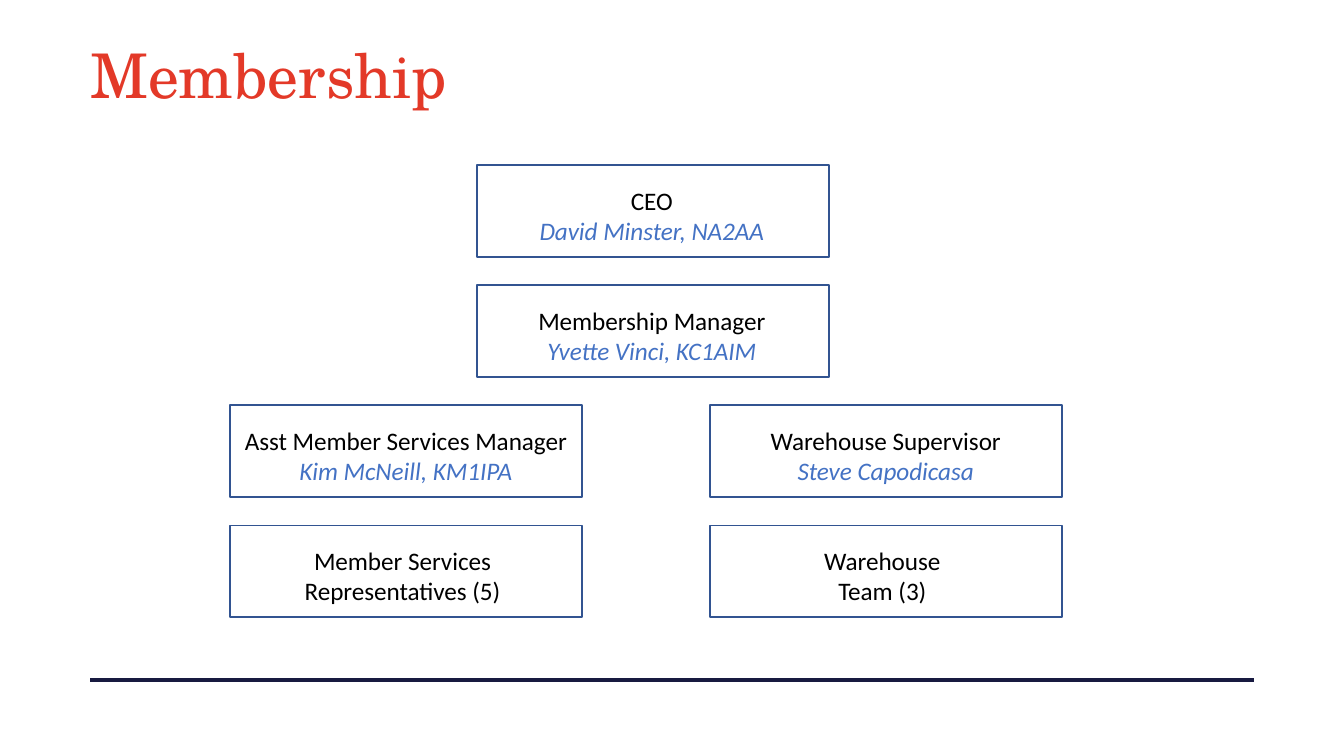
from dataclasses import dataclass

from lxml import etree
from pptx import Presentation
from pptx.dml.color import RGBColor
from pptx.enum.shapes import MSO_CONNECTOR, MSO_SHAPE
from pptx.enum.text import MSO_ANCHOR, MSO_AUTO_SIZE, PP_ALIGN
from pptx.oxml.ns import qn
from pptx.util import Inches, Pt

RECT = MSO_SHAPE.RECTANGLE
LINE = MSO_CONNECTOR.STRAIGHT
UPPER = MSO_ANCHOR.TOP
GROW = MSO_AUTO_SIZE.SHAPE_TO_FIT_TEXT
FIXED = MSO_AUTO_SIZE.NONE
LEFT, CENTER = PP_ALIGN.LEFT, PP_ALIGN.CENTER


@dataclass(frozen=True)
class Theme:
    """Colours, fonts and type sizes of the slide."""
    red: str = "E33928"
    navy: str = "181A40"
    edge: str = "325491"
    black: str = "000000"
    blue: str = "4472C4"
    head: str = "TeX Gyre Schola"
    body: str = "Calibri"
    big: float = 33
    small: float = 13.5


THEME = Theme()
WIDE, HIGH = 2.62, 0.68
TOP, LAST, ROWS = 1.23, 3.91, 4
STEP = (LAST - TOP) / (ROWS - 1)
MID, WEST, EAST = 3.55, 1.71, 5.28
FULL, TRIM, SLIM = (0, WIDE), (0.17, 2.26), (0.38, 1.81)

CARDS = [
    (MID, 0, TRIM, "CEO", "David Minster, NA2AA", True),
    (MID, 1, TRIM, "Membership Manager", "Yvette Vinci, KC1AIM", True),
    (WEST, 2, FULL, "Asst Member Services Manager", "Kim McNeill, KM1IPA", True),
    (WEST, 3, SLIM, "Member Services", "Representatives (5)", False),
    (EAST, 2, FULL, "Warehouse Supervisor", "Steve Capodicasa", True),
    (EAST, 3, SLIM, "Warehouse", "Team (3)", False),
]


def style(item, **values):
    """Set each named value on an item."""
    for name, value in values.items():
        setattr(item, name, value)


def write(para, text, color, align=CENTER, **font):
    """Fill a paragraph with one styled run."""
    run = para.add_run()
    run.text = text
    para.alignment = align
    style(run.font, **font)
    run.font.color.rgb = RGBColor.from_string(color)


def stroke(shape, color, width):
    """Give a shape or connector a solid line."""
    shape.line.color.rgb = RGBColor.from_string(color)
    shape.line.width = Pt(width)


def add_title(slide, text):
    """Place and format the title placeholder."""
    title = slide.shapes.title
    style(title, left=Inches(0.67), top=Inches(0.3),
          width=Inches(8.62), height=Inches(0.66))
    frame = title.text_frame
    style(frame, margin_left=0, margin_right=0, margin_top=Inches(0.04),
          margin_bottom=Inches(0.04), vertical_anchor=UPPER,
          word_wrap=True, auto_size=FIXED)
    para = frame.paragraphs[0]
    para.line_spacing = 0.9
    write(para, text, THEME.red, LEFT, name=THEME.head, size=Pt(THEME.big))


def add_rule(slide):
    """Draw the rule at the foot of the slide."""
    rule = slide.shapes.add_connector(
        LINE, Inches(0.67), Inches(5.06), Inches(9.33), Inches(5.06))
    stroke(rule, THEME.navy, 2)
    etree.SubElement(rule._element.spPr, qn("a:effectLst"))


def add_card(slide, left, row, span, role, detail, named):
    """Draw an outlined box with its two centred lines of text."""
    top = TOP + row * STEP
    box = slide.shapes.add_shape(
        RECT, Inches(left), Inches(top), Inches(WIDE), Inches(HIGH))
    box.shadow.inherit = False
    box.fill.background()
    stroke(box, THEME.edge, 1)

    inset, width = span
    label = slide.shapes.add_textbox(
        Inches(left + inset), Inches(top + 0.1), Inches(width), Inches(0.56))
    frame = label.text_frame
    style(frame, word_wrap=True, auto_size=GROW)
    font = {"name": THEME.body, "size": Pt(THEME.small)}
    write(frame.paragraphs[0], role, THEME.black, **font)
    color = THEME.blue if named else THEME.black
    write(frame.add_paragraph(), detail, color, italic=named, **font)


def main():
    """Build the slide and save it."""
    deck = Presentation()
    style(deck, slide_width=Inches(10), slide_height=Inches(10 * 9 / 16))
    slide = deck.slides.add_slide(deck.slide_layouts[5])
    add_rule(slide)
    add_title(slide, "Membership")
    for card in CARDS:
        add_card(slide, *card)
    deck.save("out.pptx")


if __name__ == "__main__":
    main()
